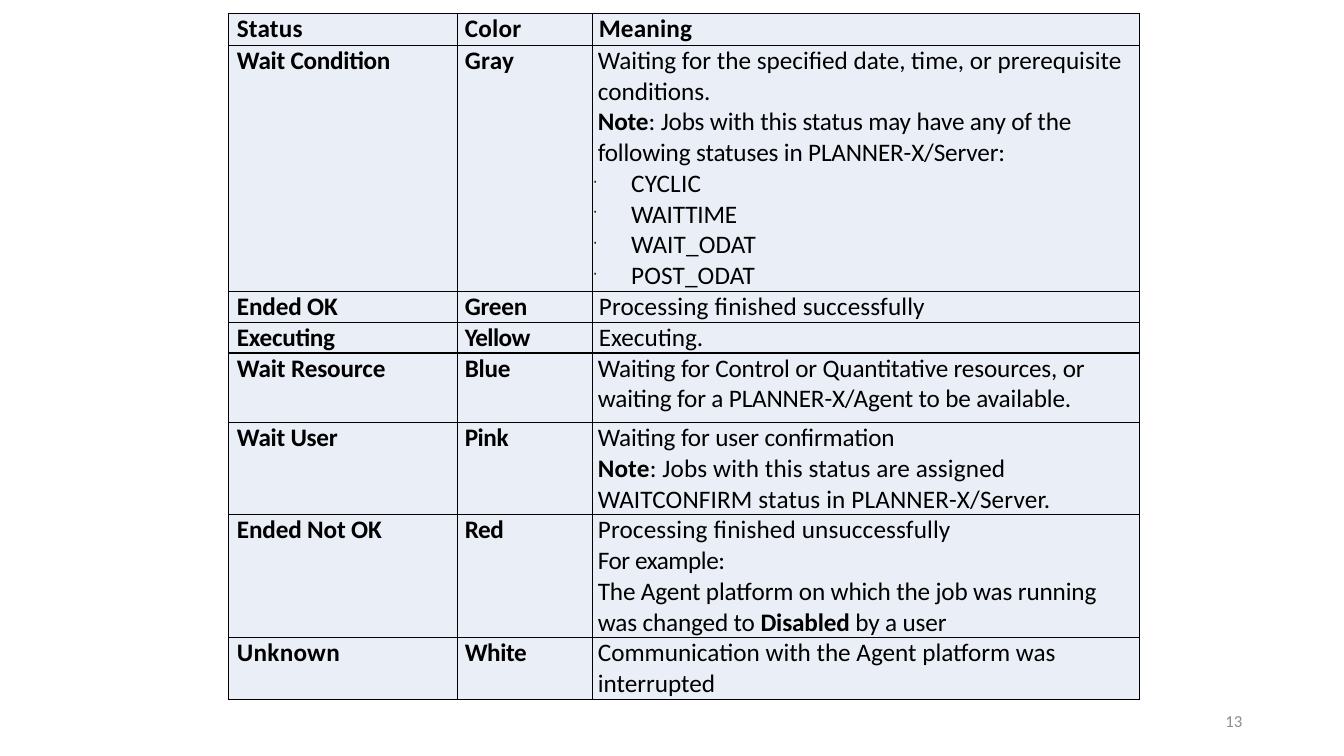
import pptx
import pptx.util
import pptx.dml.color
import pptx.enum.text
import pptx.oxml
import pptx.oxml.ns

inch = pptx.util.Inches
anchor = pptx.enum.text.MSO_ANCHOR
align = pptx.enum.text.PP_ALIGN
NS = pptx.oxml.ns.nsdecls("a")


def color(code):
    return pptx.dml.color.RGBColor.from_string(code)


def write(para, text, size, code, bold=False, space=0):
    """Add runs to a paragraph; each * toggles bold."""
    for part, words in enumerate(text.split("*")):
        if not words:
            continue
        run = para.add_run()
        run.text = words
        form = {"name": "Calibri", "size": pptx.util.Pt(size),
                "bold": bold != (part % 2 == 1)}
        for key, value in form.items():
            setattr(run.font, key, value)
        run.font.color.rgb = color(code)
        run.font._element.set("spc", str(round(space * 100)))


# Slide
deck = pptx.Presentation()
deck.slide_width, deck.slide_height = inch(13.33), inch(7.5)
slide = deck.slides.add_slide(deck.slide_layouts[6])

# Table content: height, anchors, then cells of (text, letter spacing)
TOP, MID = anchor.TOP, anchor.MIDDLE
widths = [2.27, 1.34, 5.42]
rows = [
    (0.32, (MID, MID, MID), [("Status", 0.1)], [("Color", 0.2)], [("Meaning", 0.1)]),
    (1.6, (TOP, TOP, TOP), [("Wait Condition", -0.2)], [("Gray", 0.2)], [
        ("Waiting for the specified date, time, or prerequisite conditions.", 0),
        ("*Note*: Jobs with this status may have any of the following "
         "statuses in PLANNER-X/Server:", -0.1),
        ("·CYCLIC", 0.2), ("·WAITTIME", -0.1),
        ("·WAIT_ODAT", 0.1), ("·POST_ODAT", 0.1)]),
    (0.29, (MID, MID, MID), [("Ended OK", -0.1)], [("Green", -0.2)],
     [("Processing finished successfully", 0.1)]),
    (0.3, (MID, MID, MID), [("Executing", -0.2)], [("Yellow", -0.4)],
     [("Executing.", 0)]),
    (0.69, (TOP, TOP, TOP), [("Wait Resource", -0.1)], [("Blue", -0.2)], [
        ("Waiting for Control or Quantitative resources, or waiting for a "
         "PLANNER-X/Agent to be available.", -0.1)]),
    (0.88, (TOP, TOP, TOP), [("Wait User", -0.2)], [("Pink", -0.3)], [
        ("Waiting for user confirmation", -0.1),
        ("*Note*: Jobs with this status are assigned WAITCONFIRM status in "
         "PLANNER-X/Server.", 0.1)]),
    (1.06, (TOP, TOP, TOP), [("Ended Not OK", -0.1)], [("Red", -0.3)], [
        ("Processing finished unsuccessfully", 0.1),
        ("For example:", -0.3),
        ("The Agent platform on which the job was running was changed to "
         "*Disabled* by a user", -0.1)]),
    (0.56, (TOP, TOP, MID), [("Unknown", 0.2)], [("White", -0.3)],
     [("Communication with the Agent platform was interrupted", 0)]),
]

# Table grid
frame = slide.shapes.add_table(len(rows), len(widths), inch(2.27), inch(0.13),
                               inch(sum(widths)), inch(6.71))
table = frame.table
for col, width in zip(table.columns, widths):
    col.width = inch(width)

# Cells
for r, (height, anchors, *cells) in enumerate(rows):
    table.rows[r].height = inch(height)
    for c, lines in enumerate(cells):
        cell = table.cell(r, c)
        form = {"margin_left": 0, "margin_right": 0, "margin_top": 0,
                "margin_bottom": 0, "vertical_anchor": anchors[c]}
        for key, value in form.items():
            setattr(cell, key, value)

        # Borders come before the fill in the cell's XML
        props = cell._tc.get_or_add_tcPr()
        for side in "LRTB":
            props.append(pptx.oxml.parse_xml(
                f'<a:ln{side} {NS} w="12700"><a:solidFill>'
                f'<a:srgbClr val="000000"/></a:solidFill></a:ln{side}>'))
        cell.fill.solid()
        cell.fill.fore_color.rgb = color("EAEFF7")

        # Text; the last column is indented less where it holds long text
        indent = (0.08, 0.07, 0.06 if anchors[0] == MID else 0.05)[c]
        body = cell.text_frame
        for n, (text, space) in enumerate(lines):
            para = body.add_paragraph() if n else body.paragraphs[0]
            bullet = text.startswith("·")
            left = para._p.get_or_add_pPr()
            left.set("marL", str(inch(0.38 if bullet else indent)))
            left.set("indent", str(inch(-0.38 if bullet else 0)))
            if bullet:
                for tag in ('buClr {}><a:srgbClr val="141414"/></a:buClr>',
                            'buSzPct {} val="60000"/>', 'buChar {} char="·"/>'):
                    left.append(pptx.oxml.parse_xml("<a:" + tag.format(NS)))
            write(para, text.lstrip("·"), 18, "000000", r == 0 or c < 2, space)

# Slide number
box = slide.shapes.add_textbox(inch(9.42), inch(6.95), inch(3), inch(0.4))
form = {"word_wrap": True, "vertical_anchor": MID}
for key, value in form.items():
    setattr(box.text_frame, key, value)
para = box.text_frame.paragraphs[0]
para.alignment = align.RIGHT
write(para, "13", 12, "8C8C8C")

deck.save("out.pptx")
